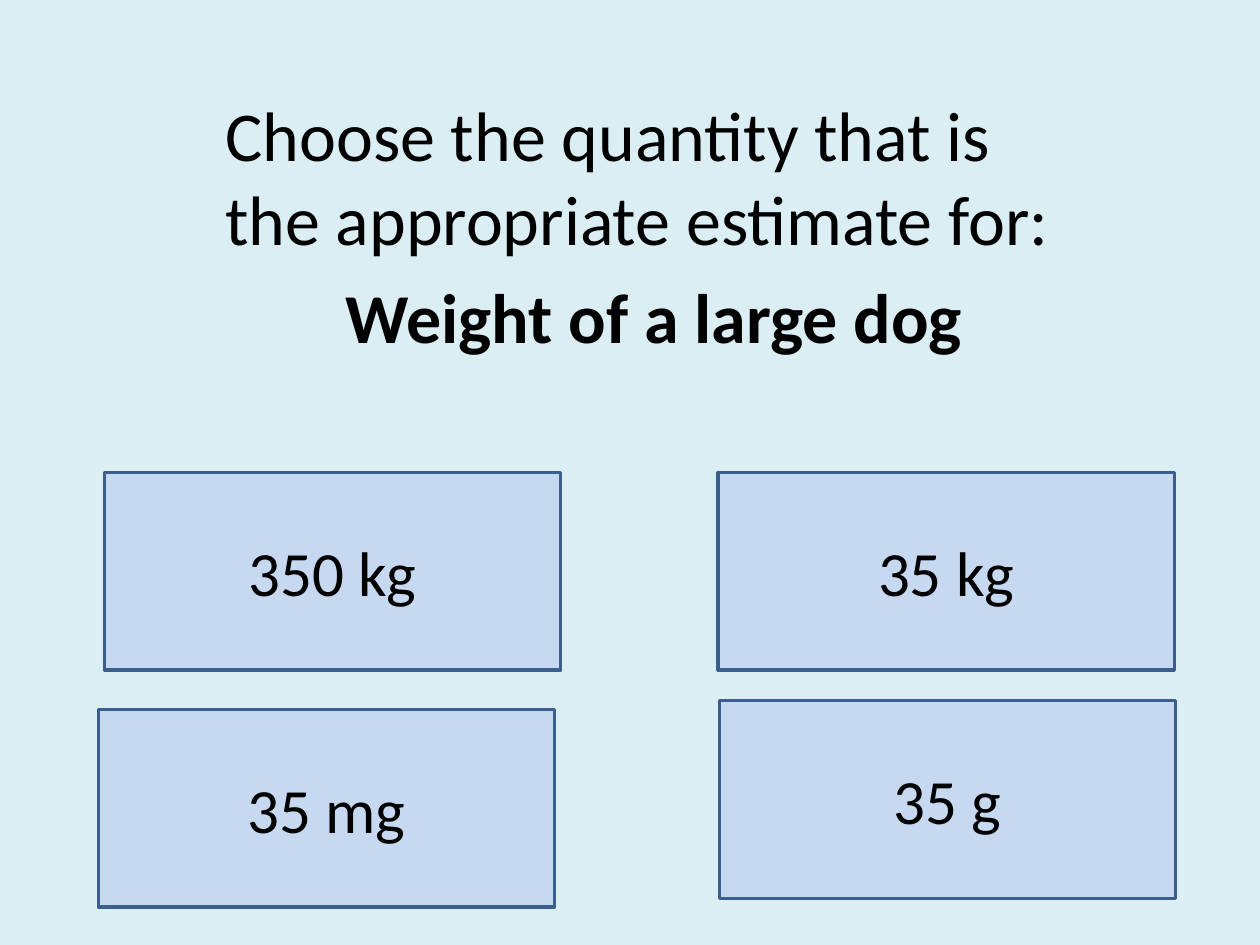
import pptx
import pptx.util
import pptx.dml.color
import pptx.enum.shapes
import pptx.enum.text

COLOURS = {"background": "DBEEF4", "box": "C6D9F1", "border": "3A5F8C", "text": "000000"}
WIDTH, HEIGHT = pptx.util.Inches(10), pptx.util.Inches(7.5)

# Answer grid in inches: columns, rows and the size of one box
COLUMNS, ROWS = (0.83, 5.7), (3.75, 5.56)
BOX_SIZE = (3.62, 1.57)

# Answer, column, row, and its shift from the grid
ANSWERS = [
    ("35 kg", 1, 0, (0, 0)),
    ("350 kg", 0, 0, (0, 0)),
    ("35 g", 1, 1, (0.01, 0)),
    ("35 mg", 0, 1, (-0.05, 0.07)),
]

ALIGN = pptx.enum.text.PP_ALIGN
QUESTION_FONT = {"name": "Calibri", "size": pptx.util.Pt(40)}
ANSWER_FONT = {"name": "Calibri", "size": pptx.util.Pt(36)}


def colour(role):
    return pptx.dml.color.RGBColor.from_string(COLOURS[role])


def apply(target, values):
    for key, value in values.items():
        setattr(target, key, value)


def paint(fill, role):
    fill.solid()
    fill.fore_color.rgb = colour(role)


def write(paragraph, text, font, layout):
    apply(paragraph, layout)
    run = paragraph.add_run()
    run.text = text
    apply(run.font, font)
    run.font.color.rgb = colour("text")


def add_question(slide, lines, left, top, width, height):
    question = slide.shapes.add_textbox(
        *(pptx.util.Inches(length) for length in (left, top, width, height)))
    frame = question.text_frame
    frame.word_wrap = True
    for index, (text, align, bold) in enumerate(lines):
        paragraph = frame.add_paragraph() if index else frame.paragraphs[0]
        write(paragraph, text, {**QUESTION_FONT, "bold": bold},
              {"alignment": align, "space_before": pptx.util.Pt(8)})


def add_answer(slide, text, column, row, shift):
    corner = (COLUMNS[column] + shift[0], ROWS[row] + shift[1])
    answer = slide.shapes.add_shape(
        pptx.enum.shapes.MSO_SHAPE.RECTANGLE,
        *(pptx.util.Inches(length) for length in corner + BOX_SIZE))
    answer.shadow.inherit = False
    paint(answer.fill, "box")
    paint(answer.line.fill, "border")
    answer.line.width = pptx.util.Pt(2)
    frame = answer.text_frame
    apply(frame, {"word_wrap": True,
                  "vertical_anchor": pptx.enum.text.MSO_ANCHOR.MIDDLE})
    write(frame.paragraphs[0], text, ANSWER_FONT, {"alignment": ALIGN.CENTER})


def main():
    deck = pptx.Presentation()
    apply(deck, {"slide_width": WIDTH, "slide_height": HEIGHT})
    slide = deck.slides.add_slide(deck.slide_layouts[6])
    paint(slide.background.fill, "background")

    # Answer boxes
    for answer in ANSWERS:
        add_answer(slide, *answer)

    # Question
    add_question(slide, [
        ("Choose the quantity that is the appropriate estimate for:", ALIGN.LEFT, False),
        ("Weight of a large dog", ALIGN.CENTER, True),
    ], 1.69, 0.68, 7, 2.45)

    deck.save("out.pptx")


if __name__ == "__main__":
    main()
